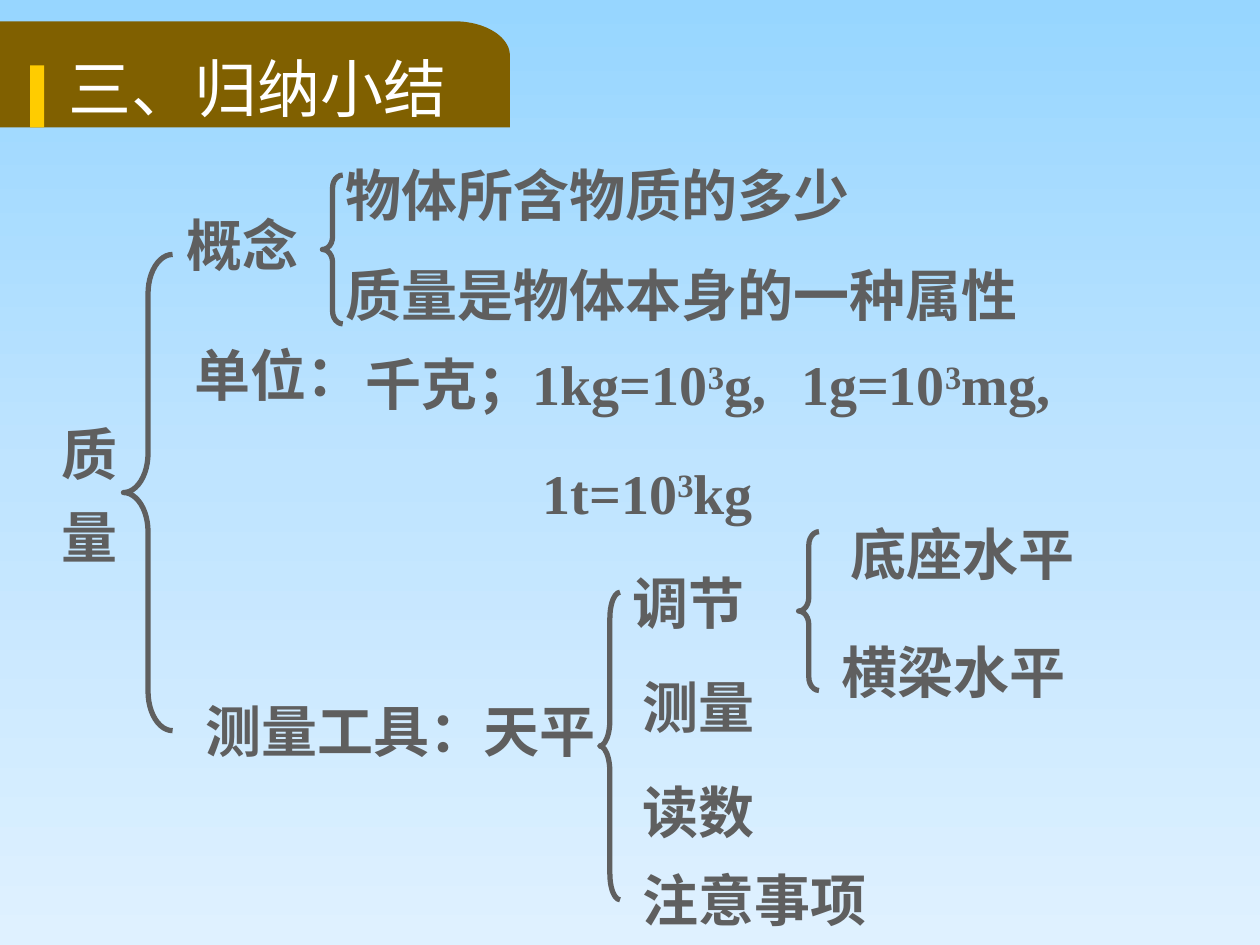
"""Build the summary slide on mass as a tree of braces and labels."""
from copy import deepcopy
from dataclasses import dataclass
from math import cos, pi, sin

from lxml import etree
from pptx import Presentation
from pptx.dml.color import RGBColor
from pptx.enum.shapes import MSO_SHAPE
from pptx.enum.text import MSO_ANCHOR, PP_ALIGN
from pptx.oxml.ns import qn
from pptx.util import Cm, Pt

RECT, BRACE = MSO_SHAPE.RECTANGLE, MSO_SHAPE.LEFT_BRACE
TOP, LEFT = MSO_ANCHOR.TOP, PP_ALIGN.LEFT


@dataclass(frozen=True)
class Theme:
    sky: tuple = ("97D6FF", "BFE4FF", "DFF1FF")
    tab: str = "806000"
    mark: str = "FFCC00"
    ink: str = "5F5F5F"
    white: str = "FFFFFF"
    cjk: str = "Noto Sans CJK SC"
    sans: str = "Arial"
    serif: str = "Times New Roman"
    head: int = 36
    body: int = 32


theme = Theme()


def style(run, face, size, color, bold):
    font = run.font
    font.name, font.size, font.bold = face, Pt(size), bold
    font.color.rgb = RGBColor.from_string(color)
    east = etree.SubElement(font._element, qn("a:ea"))
    east.set("typeface", theme.cjk)


def label(x, y, wide, high, lines, face=theme.sans, wrap=True):
    box = slide.shapes.add_textbox(Cm(x), Cm(y), Cm(wide), Cm(high))
    frame = box.text_frame
    frame.word_wrap = wrap
    for i, parts in enumerate(lines):
        para = frame.add_paragraph() if i else frame.paragraphs[0]
        para.space_before = Pt(9 if i else 0)
        for j, part in enumerate(parts):
            run = para.add_run()
            run.text = part
            style(run, face, theme.body, theme.ink, True)
            if j == 1:
                run.font._element.set("baseline", "30000")


deck = Presentation()
deck.slide_width, deck.slide_height = Cm(25.4), Cm(19.05)
slide = deck.slides.add_slide(deck.slide_layouts[5])

fill = slide.background.fill
fill.gradient()
fill.gradient_angle = 270
stop = fill.gradient_stops[0]._gs
stop.addnext(deepcopy(stop))
for i, (stop, color) in enumerate(zip(fill.gradient_stops, theme.sky)):
    stop.position = i / 2
    stop.color.rgb = RGBColor.from_string(color)

right, top, base, wide, high = 10.28, 0.43, 2.57, 1.12, 0.69
arc = [(right - wide + wide * sin(t * pi / 40),
        top + high - high * cos(t * pi / 40)) for t in range(21)]
edge = [(Cm(x), Cm(y)) for x, y in arc + [(right, base), (-0.08, base)]]
path = slide.shapes.build_freeform(Cm(-0.08), Cm(top))
path.add_line_segments(edge, close=True)
tab = path.convert_to_shape()
mark = slide.shapes.add_shape(RECT, Cm(0.61), Cm(1.32), Cm(0.28), Cm(1.25))
for shape, color in ((tab, theme.tab), (mark, theme.mark)):
    shape.shadow.inherit = False
    shape.fill.solid()
    shape.fill.fore_color.rgb = RGBColor.from_string(color)
    shape.line.fill.background()

title = slide.shapes.title
title.left, title.top, title.width, title.height = Cm(1.12), Cm(1.04), Cm(9.47), Cm(1.83)
title.text_frame.text = "三、归纳小结"
title.text_frame.vertical_anchor = TOP
para = title.text_frame.paragraphs[0]
para.alignment, para.line_spacing = LEFT, 0.9
style(para.runs[0], theme.cjk, theme.head, theme.white, False)
mark._element.addnext(title._element)

label(0.99, 8.33, 1.91, 3.63, [["质"], ["量"]])
for x, y, wide, text in (
    (3.51, 4.11, 5.59, "概念"),
    (6.71, 3.12, 14.61, "物体所含物质的多少"),
    (6.71, 5.13, 17.6, "质量是物体本身的一种属性"),
    (3.68, 6.73, 8.61, "单位："),
    (3.89, 13.92, 8.2, "测量工具："),
    (9.5, 13.92, 3.4, "天平"),
    (12.5, 11.33, 7.59, "调节"),
    (12.7, 13.44, 3.05, "测量"),
    (12.7, 15.54, 4.01, "读数"),
    (12.7, 17.32, 5.59, "注意事项"),
    (16.89, 10.34, 5.99, "底座水平"),
    (16.71, 12.73, 6.2, "横梁水平"),
):
    label(x, y, wide, 1.6, [[text]])

label(7.11, 6.93, 3.94, 1.6, [["千克；"]], wrap=False)
for x, y, wide, unit, power in (
    (10.49, 6.93, 5.26, "1kg=10", "g,"),
    (15.9, 6.93, 5.56, "1g=10", "mg,"),
    (10.69, 9.12, 4.78, "1t=10", "kg"),
):
    label(x, y, wide, 1.6, [[unit, "3", power]], theme.serif, False)

for x, y, wide, high, bend in (
    (6.5, 3.53, 0.41, 3, 0.63),
    (2.49, 5.13, 0.99, 9.6, 0.8),
    (12.09, 11.94, 0.41, 6.2, 1.29),
    (16.1, 10.72, 0.41, 3.2, 0.67),
):
    brace = slide.shapes.add_shape(BRACE, Cm(x), Cm(y), Cm(wide), Cm(high))
    brace.adjustments[0] = bend
    brace.shadow.inherit = False
    brace.fill.background()
    brace.line.color.rgb = RGBColor.from_string(theme.ink)
    brace.line.width = Pt(3)

deck.save("out.pptx")
